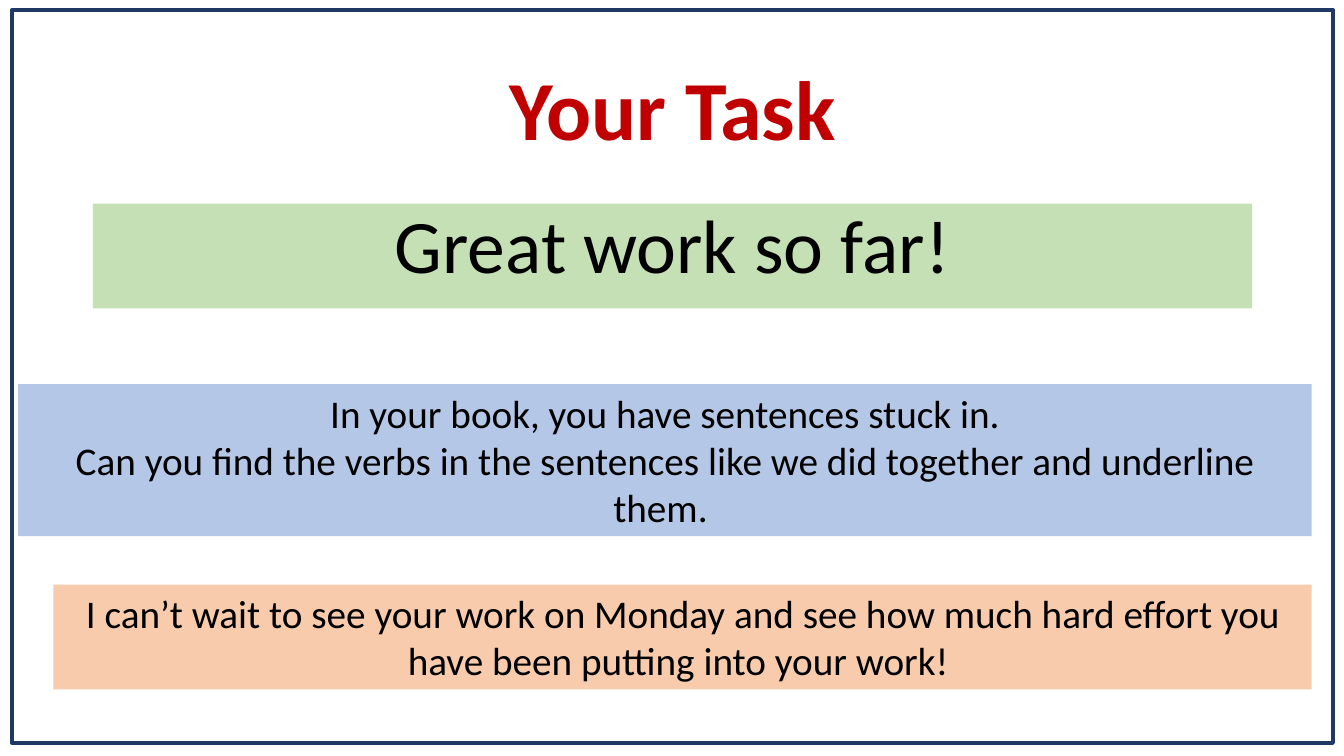
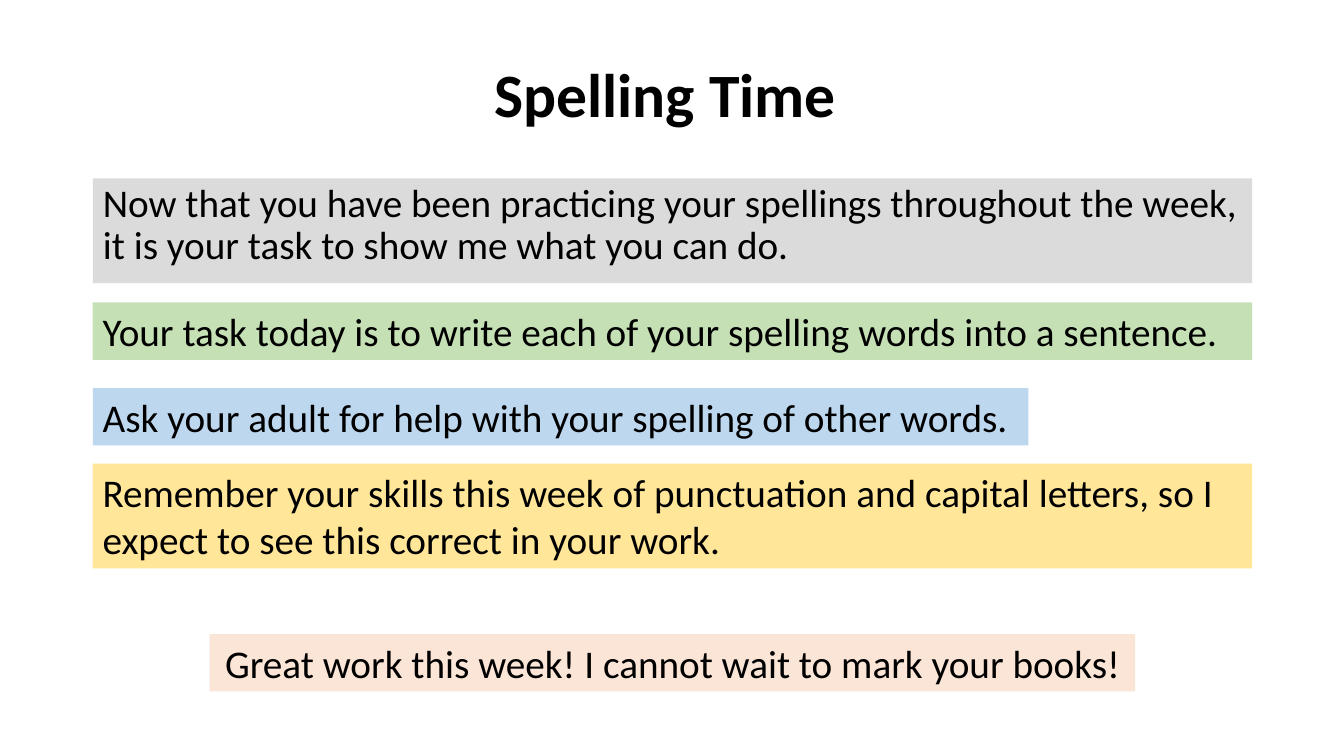
from lxml import etree
from pptx import Presentation
from pptx.dml.color import RGBColor
from pptx.enum.shapes import MSO_SHAPE
from pptx.enum.text import MSO_ANCHOR, MSO_AUTO_SIZE, PP_ALIGN
from pptx.oxml.ns import qn
from pptx.util import Inches, Pt

RECTANGLE = MSO_SHAPE.RECTANGLE
TOP, MIDDLE = MSO_ANCHOR.TOP, MSO_ANCHOR.MIDDLE
LEFT, CENTER = PP_ALIGN.LEFT, PP_ALIGN.CENTER
NO_FIT, GROW = MSO_AUTO_SIZE.NONE, MSO_AUTO_SIZE.SHAPE_TO_FIT_TEXT

BLACK = RGBColor(0x00, 0x00, 0x00)
RED = RGBColor(0xC0, 0x00, 0x00)
NAVY = RGBColor(0x20, 0x38, 0x64)
GREEN = RGBColor(0xC5, 0xE0, 0xB4)
PERIWINKLE = RGBColor(0xB4, 0xC7, 0xE7)
SKY = RGBColor(0xBD, 0xD7, 0xEE)
ORANGE = RGBColor(0xF8, 0xCB, 0xAD)
PEACH = RGBColor(0xFB, 0xE5, 0xD6)
YELLOW = RGBColor(0xFF, 0xE6, 0x99)
GREY = RGBColor(0xDB, 0xDB, 0xDB)

FONT = "Calibri"
MARGIN = 0.92
CONTENT_WIDTH = 11.5
ONE_LINE, TWO_LINES, THREE_LINES = 0.57, 1.04, 1.51


def write(frame, *lines, size=28, color=BLACK, bold=False, align=LEFT,
          spacing=1.0, before=0, anchor=TOP, fit=NO_FIT, wrap=True):
    frame.word_wrap = wrap
    frame.auto_size = fit
    frame.vertical_anchor = anchor
    for number, line in enumerate(lines):
        para = frame.add_paragraph() if number else frame.paragraphs[0]
        para.alignment = align
        para.line_spacing = spacing
        para.space_before = Pt(before)
        span = para.add_run()
        span.text = line
        span.font.name = FONT
        span.font.size = Pt(size)
        span.font.bold = bold
        span.font.color.rgb = color


def remove_bullet(para):
    properties = para._p.get_or_add_pPr()
    properties.set("marL", "0")
    properties.set("indent", "0")
    etree.SubElement(properties, qn("a:buNone"))


class Lesson:
    def __init__(self):
        self.deck = Presentation()
        self.deck.slide_width = Inches(13.33)
        self.deck.slide_height = Inches(7.5)
        self.page = None

    def add_page(self):
        self.page = self.deck.slides.add_slide(self.deck.slide_layouts[1])

    def place(self, shape, left, top, width, height):
        shape.left, shape.top = Inches(left), Inches(top)
        shape.width, shape.height = Inches(width), Inches(height)

    def title(self, text, top, **style):
        title = self.page.shapes.title
        self.place(title, MARGIN, top, CONTENT_WIDTH, 1.45)
        write(title.text_frame, text, bold=True, align=CENTER, spacing=0.9,
              anchor=MIDDLE, **style)

    def body(self, text, top, fill, **style):
        body = self.page.placeholders[1]
        self.place(body, MARGIN, top, CONTENT_WIDTH, TWO_LINES)
        body.fill.solid()
        body.fill.fore_color.rgb = fill
        write(body.text_frame, text, spacing=0.9, before=10, **style)
        remove_bullet(body.text_frame.paragraphs[0])

    def frame(self, left, top, width, height):
        border = self.page.shapes.add_shape(
            RECTANGLE, Inches(left), Inches(top), Inches(width), Inches(height))
        border.shadow.inherit = False
        border.fill.background()
        border.line.color.rgb = NAVY
        border.line.width = Pt(3)

    def band(self, *lines, top, fill, left=MARGIN, width=CONTENT_WIDTH,
             height=ONE_LINE, **style):
        box = self.page.shapes.add_textbox(
            Inches(left), Inches(top), Inches(width), Inches(height))
        box.fill.solid()
        box.fill.fore_color.rgb = fill
        write(box.text_frame, *lines, fit=GROW, **style)


def build_task(lesson):
    lesson.add_page()
    lesson.title("Your Task", 0.4, size=60, color=RED)
    lesson.body("Great work so far!", 2.02, GREEN, size=54, align=CENTER)
    lesson.frame(0.12, 0.1, 13.1, 7.27)
    lesson.band(
        "In your book, you have sentences stuck in.",
        "Can you find the verbs in the sentences like we did together and underline them. ",
        left=0.18, top=3.81, width=12.83, height=THREE_LINES,
        fill=PERIWINKLE, align=CENTER)
    lesson.band(
        "I can’t wait to see your work on Monday and see how much hard effort you "
        "have been putting into your work! ",
        left=0.53, top=5.8, width=12.48, height=TWO_LINES,
        fill=ORANGE, align=CENTER)


def build_spelling(lesson):
    lesson.add_page()
    lesson.title("Spelling Time ", 0.24, size=44)
    lesson.body(
        "Now that you have been practicing your spellings throughout the week, "
        "it is your task to show me what you can do.", 1.77, GREY)
    lesson.band(
        "Your task today is to write each of your spelling words into a sentence.",
        top=3, fill=GREEN)
    lesson.band(
        "Ask your adult for help with your spelling of other words.",
        top=3.85, width=9.28, fill=SKY, wrap=False)
    lesson.band(
        "Remember your skills this week of punctuation and capital letters, so I "
        "expect to see this correct in your work.",
        top=4.6, height=TWO_LINES, fill=YELLOW)
    lesson.band(
        "Great work this week! I cannot wait to mark your books!",
        left=2.08, top=6.29, width=9.18, fill=PEACH, align=CENTER, wrap=False)


def main():
    lesson = Lesson()
    build_task(lesson)
    build_spelling(lesson)
    lesson.deck.save("out.pptx")


if __name__ == "__main__":
    main()
